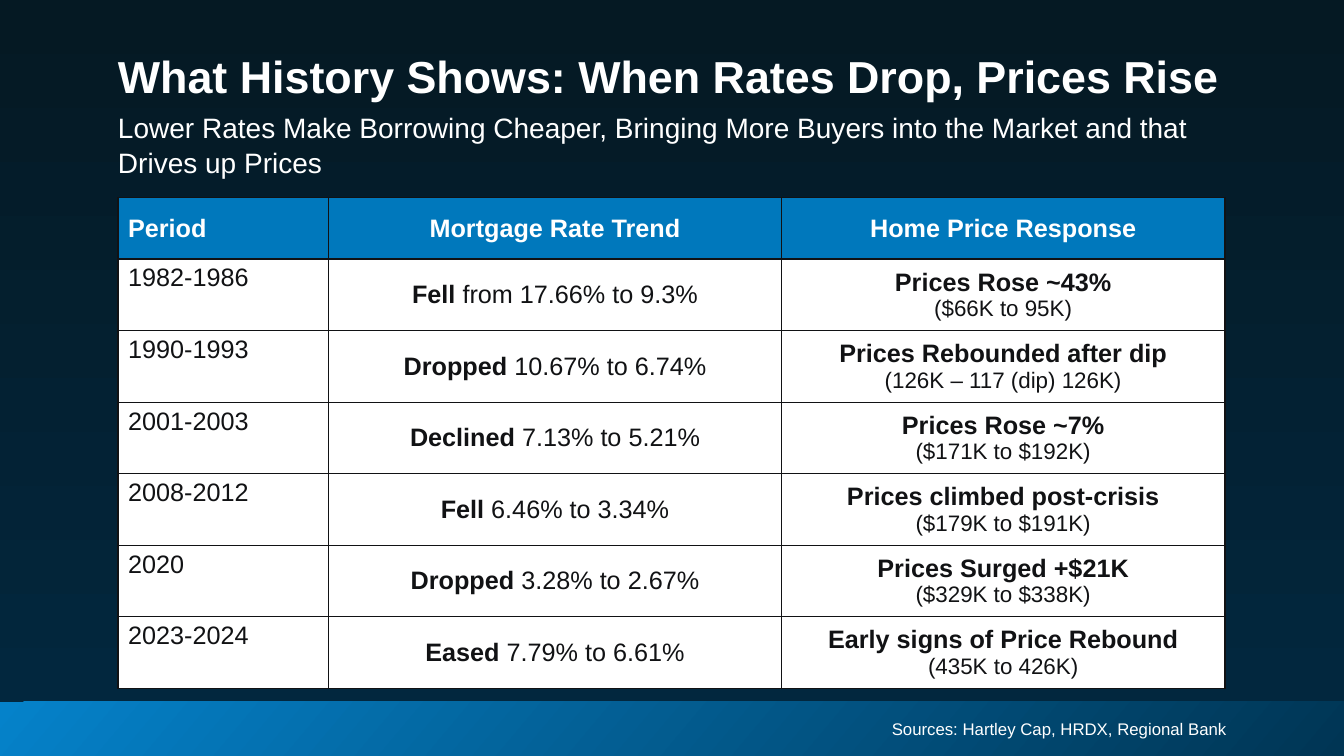
from lxml import etree
from pptx import Presentation
from pptx.dml.color import RGBColor
from pptx.enum.shapes import MSO_SHAPE
from pptx.enum.text import MSO_ANCHOR, PP_ALIGN
from pptx.oxml.ns import qn
from pptx.util import Inches, Pt

TITLE = "What History Shows: When Rates Drop, Prices Rise"
SUBTITLE = ("Lower Rates Make Borrowing Cheaper, Bringing More Buyers "
            "into the Market and that Drives up Prices")
SOURCES = "Sources: Hartley Cap, HRDX, Regional Bank"
HEADERS = ("Period", "Mortgage Rate Trend", "Home Price Response")
PERIODS = [
    ("1982-1986", "Fell", "from 17.66% to 9.3%", "Prices Rose ~43%", "($66K to 95K)"),
    ("1990-1993", "Dropped", "10.67% to 6.74%", "Prices Rebounded after dip", "(126K – 117 (dip) 126K)"),
    ("2001-2003", "Declined", "7.13% to 5.21%", "Prices Rose ~7%", "($171K to $192K)"),
    ("2008-2012", "Fell", "6.46% to 3.34%", "Prices climbed post-crisis", "($179K to $191K)"),
    ("2020", "Dropped", "3.28% to 2.67%", "Prices Surged +$21K", "($329K to $338K)"),
    ("2023-2024", "Eased", "7.79% to 6.61%", "Early signs of Price Rebound", "(435K to 426K)"),
]

WHITE = RGBColor(0xFF, 0xFF, 0xFF)
INK = RGBColor(0x11, 0x12, 0x14)
HEADER_BLUE = RGBColor(0x00, 0x78, 0xBC)
NIGHT = RGBColor(0x05, 0x19, 0x23)
NAVY = RGBColor(0x02, 0x28, 0x40)
BRIGHT_BLUE = RGBColor(0x05, 0x82, 0xCA)
DEEP_BLUE = RGBColor(0x00, 0x35, 0x54)

FONT = "Arial"
SLIDE_WIDTH, SLIDE_HEIGHT = 13.33, 7.5
FOOTER_TOP = 6.96
LEFT, TEXT_WIDTH = 1.17, 11
TABLE_TOP, HEADER_HEIGHT, ROW_HEIGHT = 1.96, 0.61, 0.71
COLUMN_WIDTHS = (2.09, 4.49, 4.4)


def fill_gradient(fill, start, end, angle):
    fill.gradient()
    fill.gradient_angle = angle
    for stop, color in zip(fill.gradient_stops, (start, end)):
        stop.color.rgb = color


def add_run(paragraph, text, size=18, color=INK, bold=False):
    run = paragraph.add_run()
    run.text = text
    run.font.name = FONT
    run.font.size = Pt(size)
    run.font.bold = bold
    run.font.color.rgb = color


def add_text(slide, text, left, top, height, size, bold=False, inset=0,
             anchor=MSO_ANCHOR.TOP, align=PP_ALIGN.LEFT, spacing=1.0, before=0):
    box = slide.shapes.add_textbox(Inches(left), Inches(top), Inches(TEXT_WIDTH), Inches(height))
    frame = box.text_frame
    frame.word_wrap = True
    frame.margin_left = frame.margin_right = 0
    frame.margin_top = frame.margin_bottom = Inches(inset)
    frame.vertical_anchor = anchor
    paragraph = frame.paragraphs[0]
    paragraph.alignment = align
    paragraph.line_spacing = spacing
    paragraph.space_before = Pt(before)
    add_run(paragraph, text, size=size, color=WHITE, bold=bold)


def fill_cell(cell, lines, fill=WHITE, color=INK, align=PP_ALIGN.CENTER, anchor=MSO_ANCHOR.MIDDLE):
    properties = cell._tc.get_or_add_tcPr()
    for side in ("lnL", "lnR", "lnT", "lnB"):
        border = etree.SubElement(properties, qn(f"a:{side}"), w=str(Pt(1)))
        solid = etree.SubElement(border, qn("a:solidFill"))
        etree.SubElement(solid, qn("a:srgbClr"), val=str(INK))
    cell.fill.solid()
    cell.fill.fore_color.rgb = fill
    cell.vertical_anchor = anchor
    for index, runs in enumerate(lines):
        frame = cell.text_frame
        paragraph = frame.add_paragraph() if index else frame.paragraphs[0]
        paragraph.alignment = align
        for text, size, bold in runs:
            add_run(paragraph, text, size=size, color=color, bold=bold)


def add_history_table(slide):
    row_heights = [HEADER_HEIGHT] + [ROW_HEIGHT] * len(PERIODS)
    table = slide.shapes.add_table(
        len(row_heights), len(COLUMN_WIDTHS), Inches(LEFT), Inches(TABLE_TOP),
        Inches(sum(COLUMN_WIDTHS)), Inches(sum(row_heights))).table
    for column, width in zip(table.columns, COLUMN_WIDTHS):
        column.width = Inches(width)
    for row, height in zip(table.rows, row_heights):
        row.height = Inches(height)
    for index, header in enumerate(HEADERS):
        fill_cell(table.cell(0, index), [[(header, 18, True)]], fill=HEADER_BLUE, color=WHITE,
                  align=PP_ALIGN.CENTER if index else PP_ALIGN.LEFT)
    for index, (period, verb, rates, response, prices) in enumerate(PERIODS, 1):
        fill_cell(table.cell(index, 0), [[(period, 18, False)]],
                  align=PP_ALIGN.LEFT, anchor=MSO_ANCHOR.TOP)
        fill_cell(table.cell(index, 1), [[(verb, 18, True), (f" {rates}", 18, False)]])
        fill_cell(table.cell(index, 2), [[(response, 18, True)], [(prices, 16, False)]])


def main():
    presentation = Presentation()
    presentation.slide_width = Inches(SLIDE_WIDTH)
    presentation.slide_height = Inches(SLIDE_HEIGHT)
    slide = presentation.slides.add_slide(presentation.slide_layouts[6])
    fill_gradient(slide.background.fill, NIGHT, NAVY, 270)

    footer = slide.shapes.add_shape(
        MSO_SHAPE.RECTANGLE, 0, Inches(FOOTER_TOP),
        Inches(SLIDE_WIDTH), Inches(SLIDE_HEIGHT - FOOTER_TOP))
    footer.shadow.inherit = False
    footer.line.fill.background()
    fill_gradient(footer.fill, BRIGHT_BLUE, DEEP_BLUE, 320)

    add_text(slide, TITLE, LEFT, 0.45, 0.59, 32, bold=True, anchor=MSO_ANCHOR.MIDDLE)
    add_text(slide, SUBTITLE, LEFT, 1.08, 0.34, 20, spacing=1.05)
    add_history_table(slide)
    add_text(slide, SOURCES, LEFT, 7.12, 0.28, 12, inset=0.05,
             align=PP_ALIGN.RIGHT, spacing=0.8, before=10)
    presentation.save("out.pptx")


if __name__ == "__main__":
    main()
